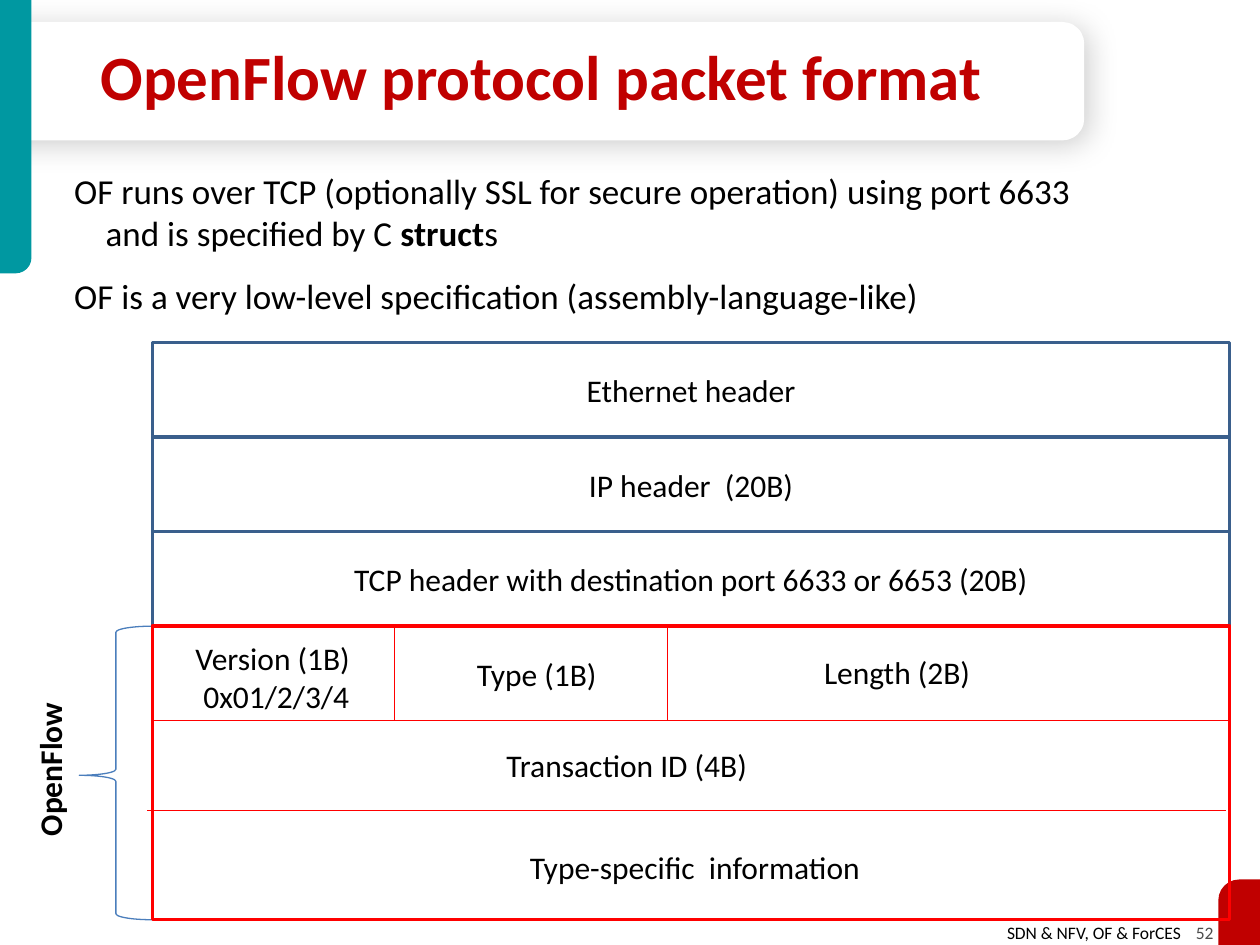
from lxml import etree
from pptx import Presentation
from pptx import util as u
from pptx.dml.color import RGBColor
from pptx.enum import shapes, text
from pptx.oxml.ns import qn

BLACK = RGBColor(0, 0, 0)
WHITE = RGBColor(255, 255, 255)
GRAY = RGBColor(0x4D, 0x4D, 0x4D)
TEAL = RGBColor(0, 0x98, 0xA1)
CRIMSON = RGBColor(0xC0, 0, 0)
RED = RGBColor(255, 0, 0)
NAVY = RGBColor(0x3A, 0x5F, 0x8C)
BLUE = RGBColor(0x4B, 0x7E, 0xBC)

LEFT, TOP, WIDTH, ROW = 1.21, 2.72, 8.55, 0.75
HEADERS = [
    "Ethernet header",
    "IP header  (20B)",
    "TCP header with destination port 6633 or 6653 (20B)",
]
OF_TOP = TOP + ROW * len(HEADERS)
OF_HEIGHT = 2.33
FIELD_BOTTOM = OF_TOP + ROW

FIELDS = [
    (["Version (1B)", " 0x01/2/3/4"], (1.25, 5.02, 1.83, 0.71)),
    (["Type (1B)"], (3.68, 5.15, 1.16, 0.4)),
    (["Length (2B)"], (6.43, 5.13, 1.38, 0.4)),
    (["Transaction ID (4B)"], (3.91, 5.87, 2.13, 0.4)),
    (["Type-specific  information"], (4.09, 6.68, 2.85, 0.4)),
]
DIVIDERS = [
    (3.13, OF_TOP, 3.13, FIELD_BOTTOM),
    (5.3, OF_TOP, 5.3, FIELD_BOTTOM),
    (LEFT, FIELD_BOTTOM, LEFT + WIDTH, FIELD_BOTTOM),
    (1.17, 6.43, 9.73, 6.43),
]
BODY = [
    ([("OF runs over TCP (optionally SSL for secure operation) using port 6633", False)], 6, -0.25),
    ([("and is specified by C ", False), ("struct", True), ("s", False)], 0, 0),
    ([("OF is a very low-level specification (assembly-language-like)", False)], 12, -0.25),
]
FOOTER = [
    ("SDN & NFV, OF & ForCES", BLACK, (7.5, 7.27, 1.97, 0.27)),
    ("52", GRAY, (9.33, 7.27, 0.4, 0.27)),
]

KIND = shapes.MSO_SHAPE
ALIGN = text.PP_ALIGN
MIDDLE = text.MSO_ANCHOR.MIDDLE

prs = Presentation()
prs.slide_width, prs.slide_height = u.Inches(10), u.Inches(7.5)
slide = prs.slides.add_slide(prs.slide_layouts[6])


def lengths(box):
    return [u.Inches(v) for v in box]


def add_run(p, words, size=18, color=BLACK, bold=False):
    r = p.add_run()
    r.text = words
    for name, value in {"name": "Calibri", "size": u.Pt(size), "bold": bold}.items():
        setattr(r.font, name, value)
    r.font.color.rgb = color


def add_shape(kind, box, fill=None, line=None, width=2, adj=()):
    s = slide.shapes.add_shape(kind, *lengths(box))
    s.shadow.inherit = False
    if fill is None:
        s.fill.background()
    else:
        s.fill.solid()
        s.fill.fore_color.rgb = fill
    if line is None:
        s.line.fill.background()
    else:
        s.line.color.rgb = line
        s.line.width = u.Pt(width)
    for i, value in enumerate(adj):
        s.adjustments[i] = value
    return s


def add_text(lines, box, align=ALIGN.LEFT, wrap=False, anchor=text.MSO_ANCHOR.TOP, **style):
    s = slide.shapes.add_textbox(*lengths(box))
    tf = s.text_frame
    tf.word_wrap, tf.vertical_anchor = wrap, anchor
    for i, words in enumerate(lines):
        p = tf.paragraphs[0] if i == 0 else tf.add_paragraph()
        p.alignment = align
        add_run(p, words, **style)
    return s


def add_shadow(s):
    effects = s.element.spPr.find(qn("a:effectLst"))
    shadow = etree.SubElement(effects, qn("a:outerShdw"), blurRad=str(u.Pt(17)),
                              dist=str(u.Pt(3)), dir=str(45 * 60000), rotWithShape="0")
    color = etree.SubElement(shadow, qn("a:srgbClr"), val="000000")
    etree.SubElement(color, qn("a:alpha"), val="19000")


for words, color, box in FOOTER:
    add_text([words], box, ALIGN.RIGHT, size=10, color=color)

panel = add_shape(KIND.ROUND_2_SAME_RECTANGLE, (3.83, -3.66, 0.94, 8.61), WHITE, adj=(0.184, 0))
panel.rotation = 90
add_shadow(panel)

for box, color, flip in [((0, 0, 0.25, 2.17), TEAL, "flipV"),
                         ((9.67, 6.98, 0.33, 0.52), CRIMSON, "flipH")]:
    s = add_shape(KIND.ROUND_1_RECTANGLE, box, color, adj=(0.5,))
    s.element.spPr.find(qn("a:xfrm")).set(flip, "1")

title = add_text(["OpenFlow protocol packet format"], (0.7, 0.29, 7.4, 0.71),
                 wrap=True, anchor=MIDDLE, size=36, color=CRIMSON, bold=True)
title.text_frame.paragraphs[0].line_spacing = 0.85

label = add_text(["OpenFlow"], (-0.24, 5.9, 1.27, 0.4), bold=True)
label.rotation = 270
add_shape(KIND.LEFT_BRACE, (0.63, OF_TOP, 0.58, OF_HEIGHT), line=BLUE, width=0.75,
          adj=(0.083, 0.508))

for i, words in enumerate(HEADERS):
    s = add_shape(KIND.RECTANGLE, (LEFT, TOP + i * ROW, WIDTH, ROW), line=NAVY)
    s.text_frame.vertical_anchor = MIDDLE
    p = s.text_frame.paragraphs[0]
    p.alignment = ALIGN.CENTER
    add_run(p, words)

add_shape(KIND.RECTANGLE, (LEFT, OF_TOP, WIDTH, OF_HEIGHT), line=RED)
for lines, box in FIELDS:
    add_text(lines, box, ALIGN.CENTER, wrap=len(lines) > 1)

for ends in DIVIDERS:
    c = slide.shapes.add_connector(shapes.MSO_CONNECTOR.STRAIGHT, *lengths(ends))
    c.line.color.rgb = RED
    c.line.width = u.Pt(0.75)
    etree.SubElement(c.element.spPr, qn("a:effectLst"))

tf = slide.shapes.add_textbox(*lengths((0.49, 1.3, 8.58, 1.36))).text_frame
tf.word_wrap = True
for i, (runs, before, indent) in enumerate(BODY):
    p = tf.paragraphs[0] if i == 0 else tf.add_paragraph()
    p.space_before = u.Pt(before)
    for name, value in {"marL": 0.25, "indent": indent}.items():
        p._p.get_or_add_pPr().set(name, str(u.Inches(value)))
    for words, bold in runs:
        add_run(p, words, size=20, bold=bold)

prs.save("out.pptx")
